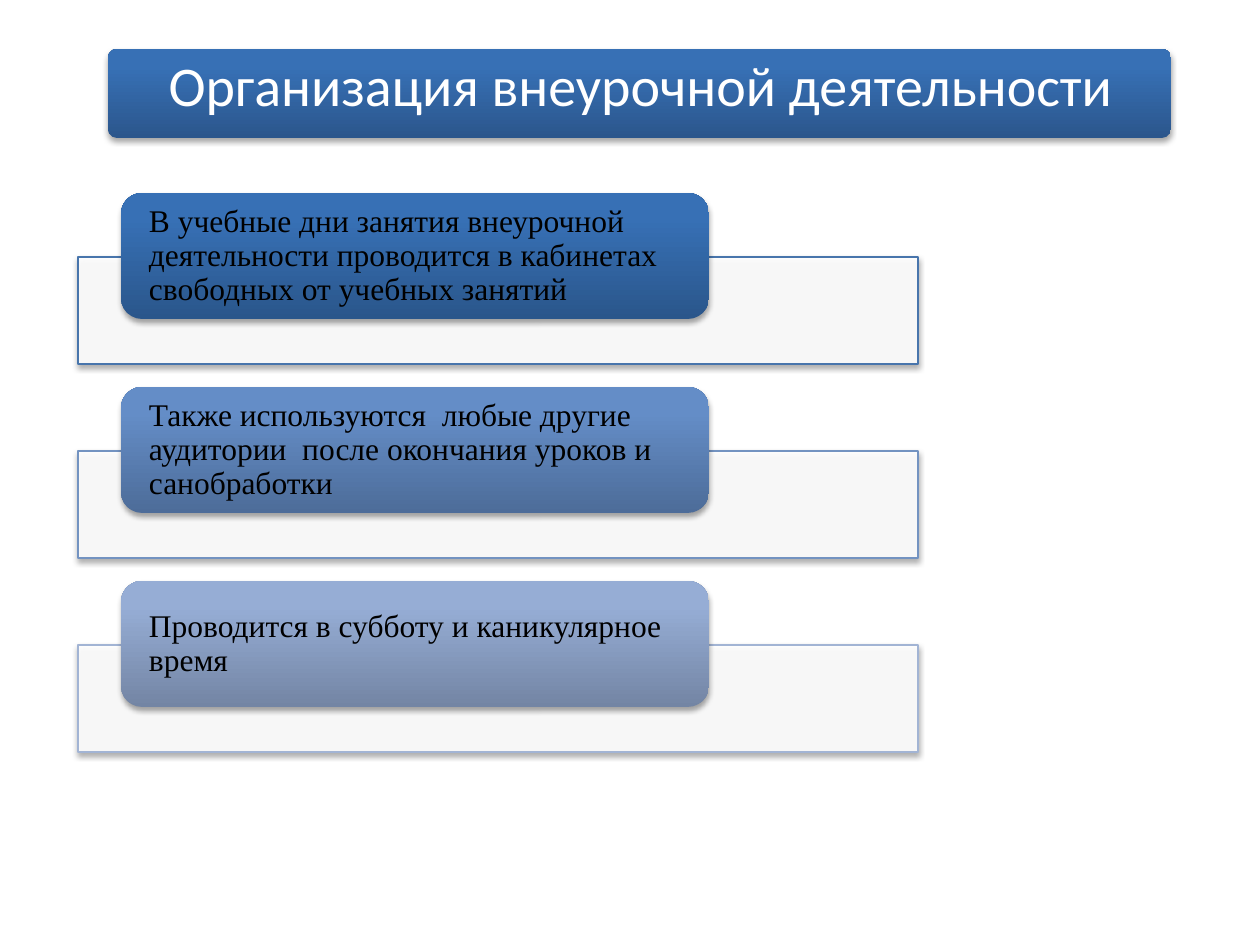
from lxml import etree
from pptx import Presentation
from pptx.dml.color import RGBColor
from pptx.enum.shapes import MSO_SHAPE as SHAPE
from pptx.enum.text import MSO_ANCHOR as ANCHOR, PP_ALIGN as ALIGN
from pptx.oxml import parse_xml
from pptx.oxml.ns import nsdecls, qn
from pptx.util import Emu, Pt

PX = 914400 // 126
SLIDE_SIZE = (1260, 945)

TITLE = "Организация внеурочной деятельности"
TITLE_BAR = (108, 49, 1063, 89)
TITLE_TEXT = (115, 52, 1052, 72)
TITLE_STOPS = ("2B568C", "3770B5", "3570B8")

ITEMS = [
    ("В учебные дни занятия внеурочной деятельности проводится в кабинетах свободных от учебных занятий",
     "4875AC", ("2A568B", "3770B5", "3570B8")),
    ("Также используются  любые другие аудитории  после окончания уроков и санобработки",
     "7393C1", ("4D6C99", "648DC7", "638DCA")),
    ("Проводится в субботу и каникулярное время",
     "A2B4D4", ("7385A4", "96ADD5", "95ADD7")),
]
FIRST_TOP, STEP = 193, 194
PANEL_LEFT, PANEL_DROP, PANEL_WIDTH, PANEL_HEIGHT = 78, 64, 840, 107
CAPTION_LEFT, CAPTION_WIDTH, CAPTION_HEIGHT = 121, 588, 126
CAPTION_PAD = 6
STOP_POSITIONS = (0, 80, 100)


def color(value):
    return RGBColor.from_string(value)


def scaled(box):
    return [Emu(length * PX) for length in box]


def add_shadowed(slide, kind, box):
    shape = slide.shapes.add_shape(kind, *scaled(box))
    shape.shadow.inherit = False
    effects = shape._element.spPr.find(qn("a:effectLst"))
    effects.append(parse_xml(
        f'<a:outerShdw {nsdecls("a")} blurRad="40000" dist="23000" dir="5400000" rotWithShape="0">'
        '<a:srgbClr val="000000"><a:alpha val="35000"/></a:srgbClr></a:outerShdw>'))
    return shape


def add_gradient_bar(slide, box, stops, rounding=None):
    bar = add_shadowed(slide, SHAPE.ROUNDED_RECTANGLE, box)
    if rounding is not None:
        bar.adjustments[0] = rounding
    bar.line.fill.background()
    stop_xml = "".join(
        f'<a:gs pos="{position * 1000}"><a:srgbClr val="{value}"/></a:gs>'
        for position, value in zip(STOP_POSITIONS, stops))
    gradient = parse_xml(
        f'<a:gradFill {nsdecls("a")} rotWithShape="1"><a:gsLst>{stop_xml}</a:gsLst>'
        '<a:lin ang="16200000" scaled="0"/></a:gradFill>')
    bar._element.spPr.find(qn("a:prstGeom")).addnext(gradient)


def add_panel(slide, box, line_color):
    panel = add_shadowed(slide, SHAPE.RECTANGLE, box)
    panel.fill.solid()
    panel.fill.fore_color.rgb = color("FFFFFF")
    fill_color = panel._element.spPr.find(qn("a:solidFill"))[0]
    etree.SubElement(fill_color, qn("a:alpha"), val="90000")
    panel.line.color.rgb = color(line_color)
    panel.line.width = Pt(0.75)


def add_text(slide, box, text, font, size, text_color, align, inset_x, inset_y):
    frame = slide.shapes.add_textbox(*scaled(box)).text_frame
    frame.word_wrap = True
    frame.vertical_anchor = ANCHOR.MIDDLE
    frame.margin_left = frame.margin_right = Emu(inset_x * PX)
    frame.margin_top = frame.margin_bottom = Emu(inset_y * PX)
    paragraph = frame.paragraphs[0]
    paragraph.alignment = align
    paragraph.line_spacing = 0.9
    run = paragraph.add_run()
    run.text = text
    run.font.name = font
    run.font.size = Pt(size)
    run.font.color.rgb = color(text_color)


def main():
    """Build the slide on organising extracurricular activities."""
    presentation = Presentation()
    presentation.slide_width, presentation.slide_height = scaled(SLIDE_SIZE)
    slide = presentation.slides.add_slide(presentation.slide_layouts[6])

    add_gradient_bar(slide, TITLE_BAR, TITLE_STOPS, 0.1)
    add_text(slide, TITLE_TEXT, TITLE, "Calibri", 32, "FFFFFF", ALIGN.CENTER, 10, 8)

    for index, (text, line_color, stops) in enumerate(ITEMS):
        top = FIRST_TOP + index * STEP
        add_panel(slide, (PANEL_LEFT, top + PANEL_DROP, PANEL_WIDTH, PANEL_HEIGHT), line_color)
        add_gradient_bar(slide, (CAPTION_LEFT, top, CAPTION_WIDTH, CAPTION_HEIGHT), stops)
        text_box = (CAPTION_LEFT + CAPTION_PAD, top + CAPTION_PAD,
                    CAPTION_WIDTH - 2 * CAPTION_PAD, CAPTION_HEIGHT - 2 * CAPTION_PAD)
        add_text(slide, text_box, text, "Times New Roman", 18, "000000", ALIGN.LEFT, 22, 0)

    presentation.save("out.pptx")


if __name__ == "__main__":
    main()
